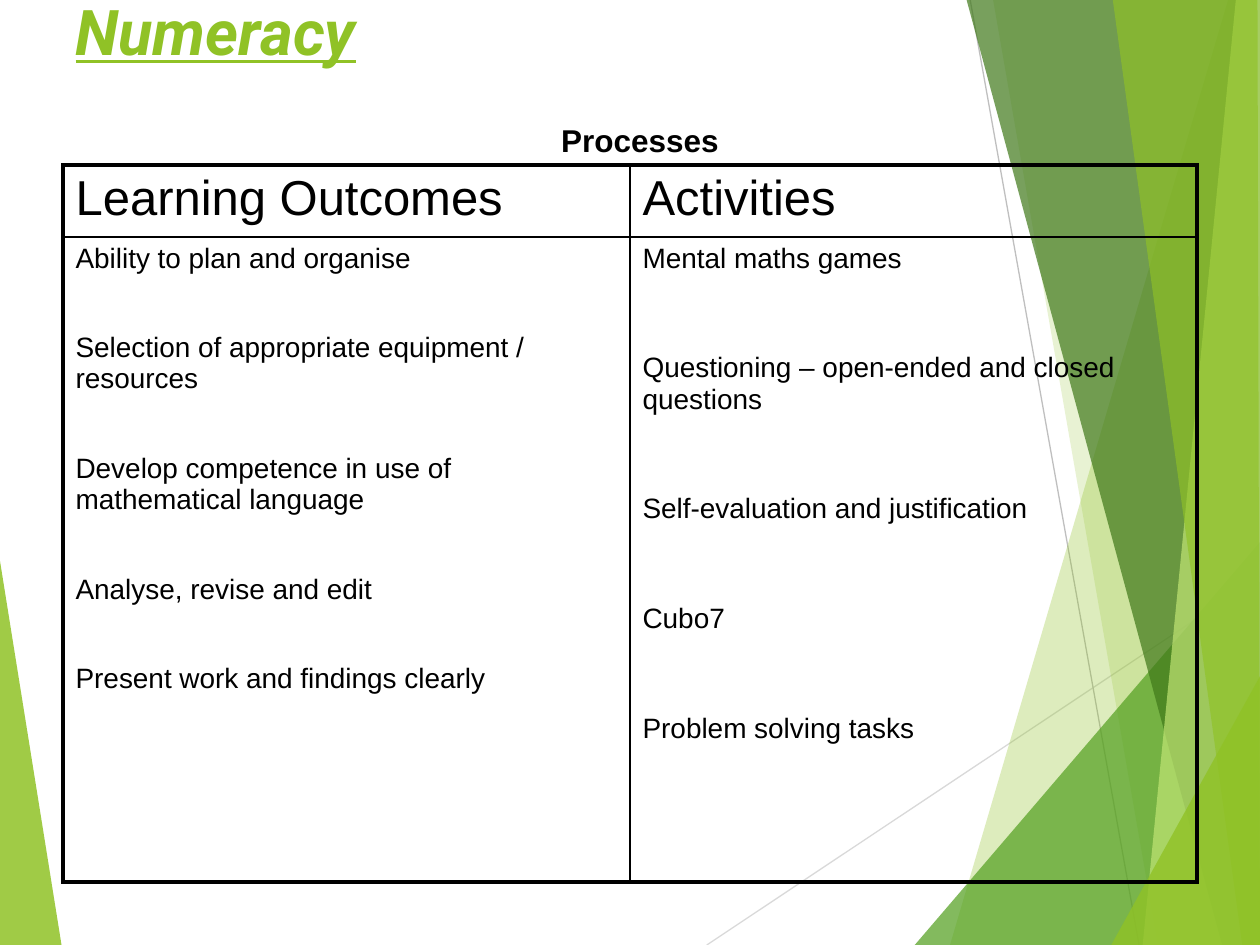
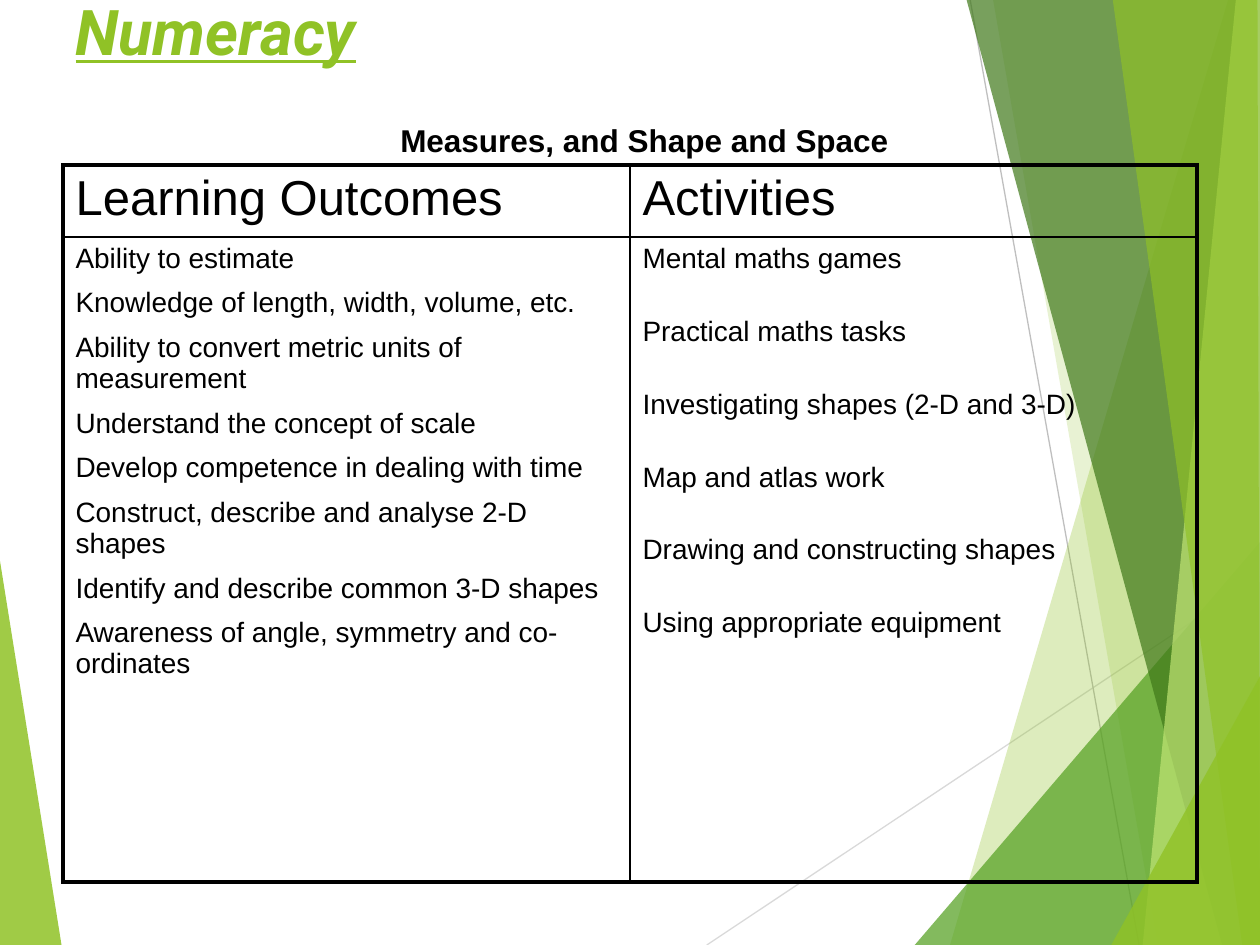
from dataclasses import dataclass

from lxml.etree import SubElement
from pptx import Presentation
from pptx.dml.color import RGBColor
from pptx.enum.shapes import MSO_CONNECTOR
from pptx.enum.text import MSO_ANCHOR, MSO_AUTO_SIZE, PP_ALIGN
from pptx.oxml.ns import qn
from pptx.util import Pt


@dataclass(frozen=True)
class Theme:
    lime: str = "90C226"
    green: str = "54A021"
    forest: str = "3F7819"
    mint: str = "C0E474"
    ink: str = "000000"
    light_gray: str = "D9D9D9"
    mid_gray: str = "BFBFBF"
    title_size: int = 36
    caption_size: int = 18
    heading_size: int = 28
    body_size: int = 16
    title_font: str = "Roboto"
    text_font: str = "Arial"
    outer_border: float = 2.25
    inner_border: float = 1
    ray_width: float = 0.75


THEME = Theme()
WIDTH, HEIGHT = 720, 540
BLEED = 0.7
LEFT, TOP, RIGHT = -BLEED, -BLEED, WIDTH + BLEED

TITLE_FORMAT = {"name": THEME.title_font, "size": Pt(THEME.title_size),
                "bold": True, "italic": True, "underline": True}
CAPTION_FORMAT = {"name": THEME.text_font, "size": Pt(THEME.caption_size), "bold": True}
HEADING_FORMAT = {"name": THEME.text_font, "size": Pt(THEME.heading_size), "bold": False}
BODY_FORMAT = {"name": THEME.text_font, "size": Pt(THEME.body_size), "bold": False}

CORNER = [((LEFT, 316), (35.3, HEIGHT + BLEED), (LEFT, HEIGHT), THEME.lime, 85)]
RAYS = [
    ((403.9, HEIGHT), (RIGHT, 329), THEME.light_gray),
    ((554.4, 0), (650.9, HEIGHT), THEME.mid_gray),
]


def band(top_left, bottom_left, color, opacity, top_right=RIGHT, bottom_right=RIGHT):
    return ((top_left, TOP), (bottom_left, HEIGHT), (bottom_right, HEIGHT),
            (top_right, TOP), color, opacity)


def wedge(left, peak, color, opacity):
    return (left, HEIGHT), (RIGHT, peak), (RIGHT, HEIGHT), color, opacity


FACETS = [
    band(702, 542.9, THEME.lime, 30),
    band(567.4, 661.7, THEME.lime, 20),
    wedge(522.7, 308.9, THEME.green, 72),
    band(552.2, 698.4, THEME.forest, 70),
    band(706.3, 653, THEME.mint, 70, top_right=WIDTH),
    band(635.8, 709.9, THEME.lime, 65, top_right=718.6, bottom_right=WIDTH),
    wedge(635, 385.2, THEME.lime, 80),
]

HEADINGS = ["Learning Outcomes", "Activities"]
TOPICS = [
    {
        "caption": "Processes",
        "caption_left": 235.4,
        "caption_width": 260.6,
        "gaps": [33.4, 44.9],
        "columns": [
            ["Ability to plan and organise",
             "Selection of appropriate equipment / resources",
             "Develop competence in use of mathematical language",
             "Analyse, revise and edit",
             "Present work and findings clearly"],
            ["Mental maths games",
             "Questioning – open-ended and closed questions",
             "Self-evaluation and justification",
             "Cubo7",
             "Problem solving tasks"],
        ],
    },
    {
        "caption": "Measures, and Shape and Space",
        "caption_left": 212.4,
        "caption_width": 311.8,
        "gaps": [7.7, 23.9],
        "columns": [
            ["Ability to estimate",
             "Knowledge of length, width, volume, etc.",
             "Ability to convert metric units of measurement",
             "Understand the concept of scale",
             "Develop competence in dealing with time",
             "Construct, describe and analyse 2-D shapes",
             "Identify and describe common 3-D shapes",
             "Awareness of angle, symmetry and co-ordinates"],
            ["Mental maths games",
             "Practical maths tasks",
             "Investigating shapes (2-D and 3-D)",
             "Map and atlas work",
             "Drawing and constructing shapes",
             "Using appropriate equipment"],
        ],
    },
]


def apply(target, settings):
    for name, value in settings.items():
        setattr(target, name, value)


def place(shape, left, top, width, height):
    apply(shape, {"left": Pt(left), "top": Pt(top),
                  "width": Pt(width), "height": Pt(height)})


def write(frame, lines, font_format, color, align=PP_ALIGN.LEFT, gap=0):
    for index, line in enumerate(lines):
        paragraph = frame.add_paragraph() if index else frame.paragraphs[0]
        apply(paragraph, {"alignment": align, "space_before": Pt(gap if index else 0)})
        run = paragraph.add_run()
        run.text = line
        apply(run.font, font_format)
        run.font.color.rgb = RGBColor.from_string(color)


def add_facet(slide, *outline, color, opacity):
    corners = [(Pt(x), Pt(y)) for x, y in outline]
    builder = slide.shapes.build_freeform(*corners[0], scale=1.0)
    builder.add_line_segments(corners[1:], close=True)
    facet = builder.convert_to_shape()
    facet.shadow.inherit = False
    facet.line.fill.background()
    facet.fill.solid()
    facet.fill.fore_color.rgb = RGBColor.from_string(color)
    tint = facet.element.spPr.find(qn("a:solidFill"))[0]
    SubElement(tint, qn("a:alpha"), val=str(opacity * 1000))


def add_ray(slide, start, end, color):
    ray = slide.shapes.add_connector(
        MSO_CONNECTOR.STRAIGHT, *[Pt(value) for value in start + end])
    ray.line.width = Pt(THEME.ray_width)
    ray.line.color.rgb = RGBColor.from_string(color)
    SubElement(ray.element.spPr, qn("a:effectLst"))


def add_backdrop(slide):
    for *outline, color, opacity in CORNER:
        add_facet(slide, *outline, color=color, opacity=opacity)
    for ray in RAYS:
        add_ray(slide, *ray)
    for *outline, color, opacity in FACETS:
        add_facet(slide, *outline, color=color, opacity=opacity)


def add_title(slide, text):
    title = slide.shapes.title
    title.element.getparent().append(title.element)
    place(title, 36, -8, 648, 90)
    apply(title.text_frame, {"vertical_anchor": MSO_ANCHOR.TOP, "word_wrap": True,
                             "auto_size": MSO_AUTO_SIZE.NONE})
    write(title.text_frame, [text], TITLE_FORMAT, THEME.lime)


def add_caption(slide, text, left, width):
    caption = slide.shapes.add_textbox(Pt(left), Pt(65.5), Pt(width), Pt(29))
    apply(caption.text_frame, {"word_wrap": True,
                               "auto_size": MSO_AUTO_SIZE.SHAPE_TO_FIT_TEXT})
    write(caption.text_frame, [text], CAPTION_FORMAT, THEME.ink, PP_ALIGN.CENTER)


def set_borders(cell, row, column):
    outer_sides = {"lnL": column == 0, "lnR": column == 1,
                   "lnT": row == 0, "lnB": row == 1}
    properties = cell._tc.get_or_add_tcPr()
    for side, is_outer in outer_sides.items():
        width = THEME.outer_border if is_outer else THEME.inner_border
        border = SubElement(properties, qn(f"a:{side}"), w=str(Pt(width)))
        SubElement(SubElement(border, qn("a:solidFill")), qn("a:srgbClr"), val=THEME.ink)


def add_outcomes_table(slide, columns, gaps):
    table = slide.shapes.add_table(2, 2, Pt(36), Pt(94.3), Pt(648), Pt(409.7)).table
    apply(table, {"first_row": False, "horz_banding": False})
    for row, height in zip(table.rows, (41, 368.7)):
        row.height = Pt(height)
    for column, (heading, entries, gap) in enumerate(zip(HEADINGS, columns, gaps)):
        contents = [([heading], HEADING_FORMAT), (entries, BODY_FORMAT)]
        for row, (lines, font_format) in enumerate(contents):
            cell = table.cell(row, column)
            set_borders(cell, row, column)
            cell.fill.background()
            write(cell.text_frame, lines, font_format, THEME.ink, gap=gap)


def main():
    deck = Presentation()
    apply(deck, {"slide_width": Pt(WIDTH), "slide_height": Pt(HEIGHT)})
    title_only = deck.slide_layouts[5]
    for topic in TOPICS:
        slide = deck.slides.add_slide(title_only)
        add_backdrop(slide)
        add_title(slide, "Numeracy")
        add_outcomes_table(slide, topic["columns"], topic["gaps"])
        add_caption(slide, topic["caption"], topic["caption_left"], topic["caption_width"])
    deck.save("out.pptx")


if __name__ == "__main__":
    main()
